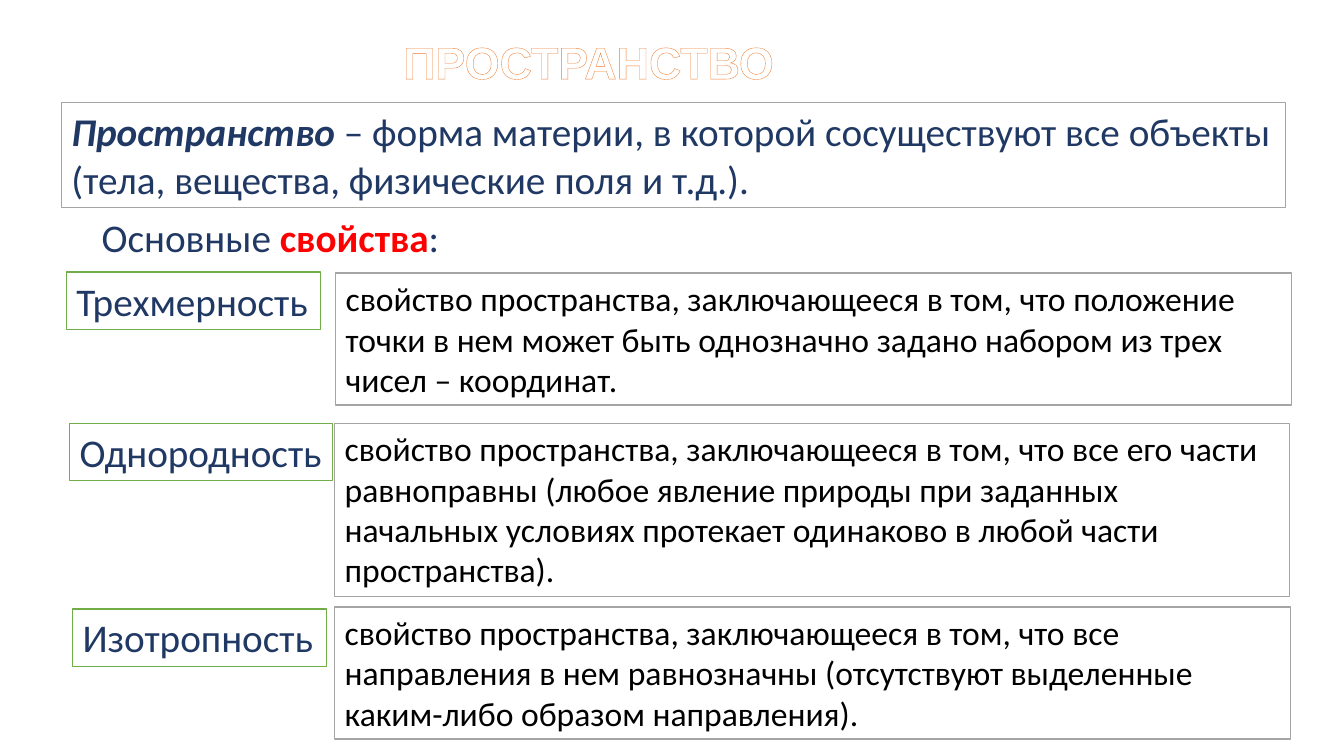
from dataclasses import dataclass

from lxml.etree import SubElement
from pptx import Presentation
from pptx.dml.color import RGBColor as RGB
from pptx.enum.shapes import MSO_SHAPE
from pptx.enum.text import MSO_ANCHOR, MSO_AUTO_SIZE, PP_ALIGN
from pptx.oxml.ns import qn
from pptx.util import Inches, Pt


@dataclass(frozen=True)
class Theme:
    font: str = "Calibri"
    title_font: str = "Arial"
    white: str = "FFFFFF"
    black: str = "000000"
    navy: str = "203864"
    red: str = "FF0000"
    gray: str = "A5A5A5"
    green: str = "70AD47"
    orange: str = "ED7D31"
    title_size: int = 32
    lead_size: int = 28
    text_size: int = 24


@dataclass(frozen=True)
class Span:
    text: str
    bold: bool = False
    italic: bool = False
    color: str | None = None


@dataclass(frozen=True)
class Box:
    left: float
    top: float
    width: float
    height: float
    spans: tuple[Span, ...]
    size: int
    color: str
    line: str | None = None
    wrap: bool = True
    font: str = "Calibri"


@dataclass(frozen=True)
class Property:
    label: Box
    meaning: Box


THEME = Theme()


def label(left: float, top: float, width: float, text: str) -> Box:
    return Box(left, top, width, 0.57, (Span(text),), THEME.lead_size,
               THEME.navy, THEME.green, wrap=False)


def meaning(left: float, top: float, width: float, height: float, text: str) -> Box:
    full = f"свойство пространства, заключающееся в том, что {text}"
    return Box(left, top, width, height, (Span(full),), THEME.text_size,
               THEME.black, THEME.gray)


TITLE = Box(3.9, 0.29, 3.91, 0.64, (Span("ПРОСТРАНСТВО", bold=True),),
            THEME.title_size, THEME.white, wrap=False, font=THEME.title_font)
DEFINITION = Box(
    0.61, 1.02, 12.14, 1.04,
    (Span("Пространство", bold=True, italic=True),
     Span(" – форма материи, в которой сосуществуют все объекты "
          "(тела, вещества, физические поля и т.д.).")),
    THEME.lead_size, THEME.navy, THEME.gray)
HEADING = Box(
    0.91, 2.07, 11.31, 0.57,
    (Span("Основные "), Span("свойства", bold=True, color=THEME.red), Span(":")),
    THEME.lead_size, THEME.navy)
PROPERTIES = (
    Property(label(0.66, 2.7, 2.52, "Трехмерность"),
             meaning(3.33, 2.71, 9.48, 1.31,
                     "положение точки в нем может быть однозначно задано "
                     "набором из трех чисел – координат.")),
    Property(label(0.69, 4.2, 2.61, "Однородность"),
             meaning(3.32, 4.2, 9.47, 1.72,
                     "все его части равноправны (любое явление природы при "
                     "заданных начальных условиях протекает одинаково в любой "
                     "части пространства).")),
    Property(label(0.72, 6.04, 2.52, "Изотропность"),
             meaning(3.32, 6.02, 9.48, 1.31,
                     "все направления в нем равнозначны (отсутствуют "
                     "выделенные каким-либо образом направления).")),
)


def frame(box: Box) -> tuple:
    return tuple(map(Inches, (box.left, box.top, box.width, box.height)))


def write(shape, box: Box) -> None:
    tf = shape.text_frame
    tf.word_wrap = box.wrap
    tf.auto_size = MSO_AUTO_SIZE.NONE
    tf.vertical_anchor = MSO_ANCHOR.TOP
    p = tf.paragraphs[0]
    p.alignment = PP_ALIGN.LEFT
    p.font.name = box.font
    p.font.size = Pt(box.size)
    for span in box.spans:
        r = p.add_run()
        r.text = span.text
        r.font.bold = span.bold
        r.font.italic = span.italic
        r.font.color.rgb = RGB.from_string(span.color or box.color)


def outline_text(run, color: str, width: float) -> None:
    props = run.font._element
    ln = SubElement(props, qn("a:ln"), w=str(Pt(width)))
    fill = SubElement(ln, qn("a:solidFill"))
    SubElement(fill, qn("a:srgbClr"), val=color)
    props.insert(0, ln)


def add_title(s, box: Box) -> None:
    title = s.shapes.title
    title.left, title.top, title.width, title.height = frame(box)
    write(title, box)
    outline_text(title.text_frame.paragraphs[0].runs[0], THEME.orange, 0.52)


def add_box(s, box: Box) -> None:
    if box.line is None:
        sp = s.shapes.add_textbox(*frame(box))
    else:
        sp = s.shapes.add_shape(MSO_SHAPE.RECTANGLE, *frame(box))
        sp.shadow.inherit = False
        sp.fill.solid()
        sp.fill.fore_color.rgb = RGB.from_string(THEME.white)
        sp.line.color.rgb = RGB.from_string(box.line)
        sp.line.width = Pt(1)
    write(sp, box)


def main() -> None:
    prs = Presentation()
    prs.slide_width, prs.slide_height = Inches(13.33), Inches(7.5)
    s = prs.slides.add_slide(prs.slide_layouts.get_by_name("Title Only"))
    add_title(s, TITLE)
    add_box(s, DEFINITION)
    add_box(s, HEADING)
    for prop in PROPERTIES:
        add_box(s, prop.label)
        add_box(s, prop.meaning)
    prs.save("out.pptx")


if __name__ == "__main__":
    main()
